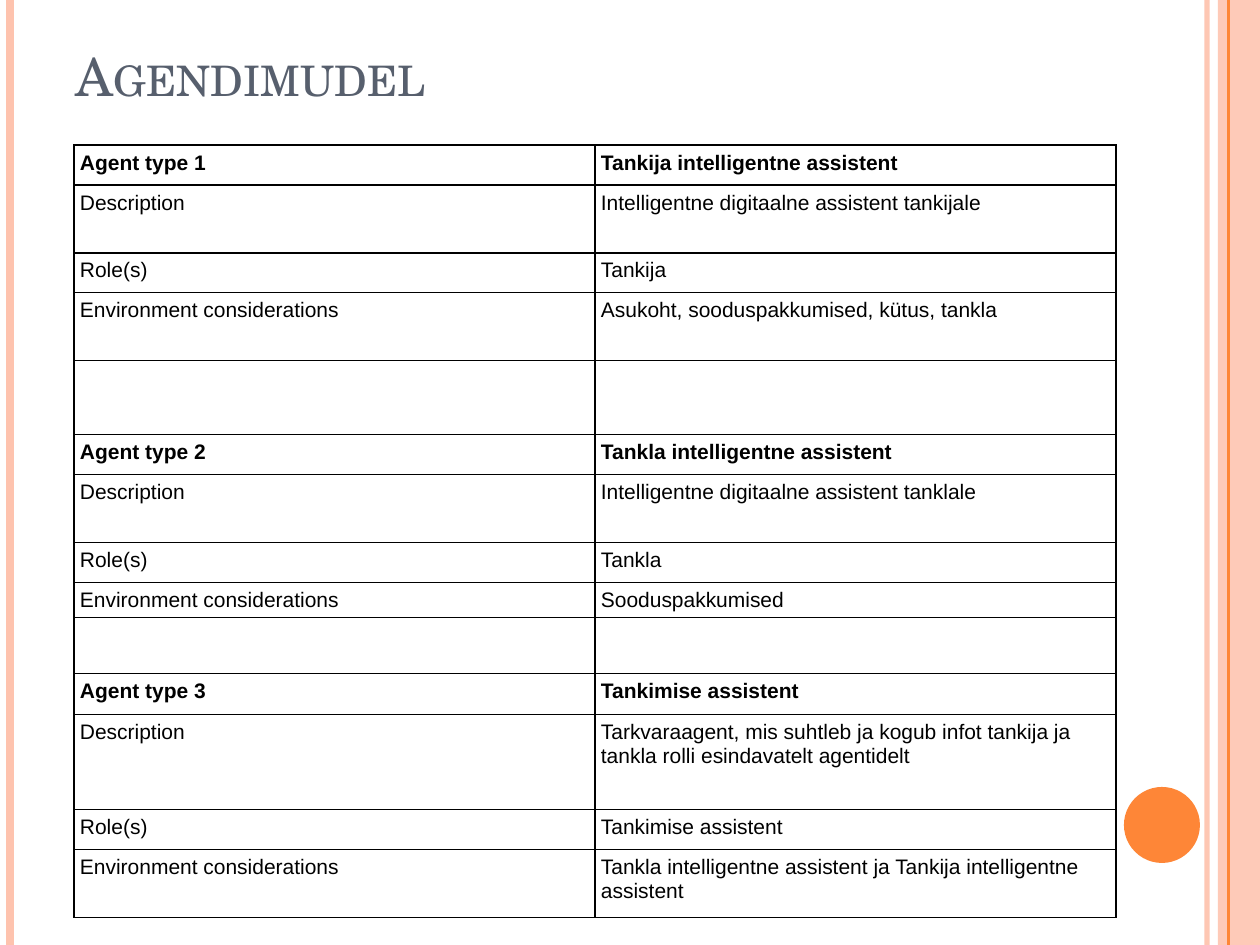
from lxml import etree
from pptx import Presentation
from pptx.dml.color import RGBColor
from pptx.enum.shapes import MSO_CONNECTOR, MSO_SHAPE
from pptx.enum.text import MSO_ANCHOR, PP_ALIGN
from pptx.oxml.ns import qn
from pptx.util import Emu, Pt

STRAIGHT = MSO_CONNECTOR.STRAIGHT
RECTANGLE, OVAL = MSO_SHAPE.RECTANGLE, MSO_SHAPE.OVAL
TOP, LEFT = MSO_ANCHOR.TOP, PP_ALIGN.LEFT
PX = 914400 / 126
WIDTH, HEIGHT = 1260, 945
PEACH, ORANGE, SLATE, BLACK = "FEC3AE", "FE8637", "575F6D", "000000"


def px(length):
    return Emu(round(length * PX))


def paint(color_format, color, alpha=100):
    """Set a hex colour, with its opacity in percent."""
    color_format.rgb = RGBColor.from_string(color)
    if alpha < 100:
        srgb = color_format._xFill.find(qn("a:srgbClr"))
        etree.SubElement(srgb, qn("a:alpha"), val=str(alpha * 1000))


prs = Presentation()
prs.slide_width, prs.slide_height = px(WIDTH), px(HEIGHT)
slide = prs.slides.add_slide(prs.slide_layouts[5])
shapes = slide.shapes

# Vertical stripes, side band and circle
right_band = (RECTANGLE, 1218, 0, 42, HEIGHT, PEACH, 87)
circle = (OVAL, 1124, 787, 76, 76, ORANGE, 100)
stripes = [
    (1207, PEACH, 3, 93),
    (10, PEACH, 4.5, 100),
    (1228, ORANGE, 1.5, 100),
    (1239, PEACH, 0.75, 100),
]
stripes[3] = (1229, ORANGE, 0.75, 100)
for kind, left, top, width, height, color, alpha in (right_band, circle):
    decoration = shapes.add_shape(kind, px(left), px(top), px(width), px(height))
    decoration.shadow.inherit = False
    decoration.fill.solid()
    paint(decoration.fill.fore_color, color, alpha)
    decoration.line.fill.background()
for x, color, weight, alpha in stripes:
    stripe = shapes.add_connector(STRAIGHT, px(x), 0, px(x), px(HEIGHT))
    stripe.line.width = Pt(weight)
    stripe.line.fill.solid()
    paint(stripe.line.fill.fore_color, color, alpha)
    etree.SubElement(stripe._element.spPr, qn("a:effectLst"))

# Title
title = shapes.title
title_box = {"left": 63, "top": 38, "width": 1029, "height": 157}
for side, length in title_box.items():
    setattr(title, side, px(length))
title.text_frame.text = "Agendimudel"
title.text_frame.vertical_anchor = TOP
heading = title.text_frame.paragraphs[0]
heading.alignment = LEFT
heading_font = heading.runs[0].font
for name, value in {"name": "TeX Gyre Schola", "size": Pt(30), "bold": False}.items():
    setattr(heading_font, name, value)
paint(heading_font.color, SLATE)
heading.runs[0]._r.get_or_add_rPr().set("cap", "small")

# Agent table: one group of rows per agent, with an empty row between groups
labels = ["Description", "Role(s)", "Environment considerations"]
agents = [
    ("Tankija intelligentne assistent",
     "Intelligentne digitaalne assistent tankijale",
     "Tankija",
     "Asukoht, sooduspakkumised, kütus, tankla"),
    ("Tankla intelligentne assistent",
     "Intelligentne digitaalne assistent tanklale",
     "Tankla",
     "Sooduspakkumised"),
    ("Tankimise assistent",
     "Tarkvaraagent, mis suhtleb ja kogub infot tankija ja "
     "tankla rolli esindavatelt agentidelt",
     "Tankimise assistent",
     "Tankla intelligentne assistent ja Tankija intelligentne assistent"),
]
rows = []
for number, values in enumerate(agents, 1):
    if rows:
        rows.append(("", ""))
    rows += zip([f"Agent type {number}"] + labels, values)

row_heights = [40, 68, 40, 68, 74, 40, 68, 40, 35, 56, 41, 95, 40, 68]
table = shapes.add_table(len(rows), 2, px(74), px(145), px(1042),
                         px(sum(row_heights))).table
table.first_row = table.horz_banding = False
for column in table.columns:
    column.width = px(521)
cell_format = {"margin_left": px(6), "margin_right": px(6), "margin_top": px(6),
               "margin_bottom": px(4), "vertical_anchor": TOP}

for row, height, texts in zip(table.rows, row_heights, rows):
    row.height = px(height)
    for cell, text in zip(row.cells, texts):
        for name, value in cell_format.items():
            setattr(cell, name, value)
        if text:
            cell.text = text
            font = cell.text_frame.paragraphs[0].runs[0].font
            bold = texts[0].startswith("Agent type")
            for name, value in {"name": "Arial", "size": Pt(12), "bold": bold}.items():
                setattr(font, name, value)
            paint(font.color, BLACK)
        properties = cell._tc.get_or_add_tcPr()
        for edge in ("a:lnL", "a:lnR", "a:lnT", "a:lnB"):
            border = etree.SubElement(properties, qn(edge), w=str(Pt(0.75)))
            border_fill = etree.SubElement(border, qn("a:solidFill"))
            etree.SubElement(border_fill, qn("a:srgbClr"), val=BLACK)
        cell.fill.background()

prs.save("out.pptx")
